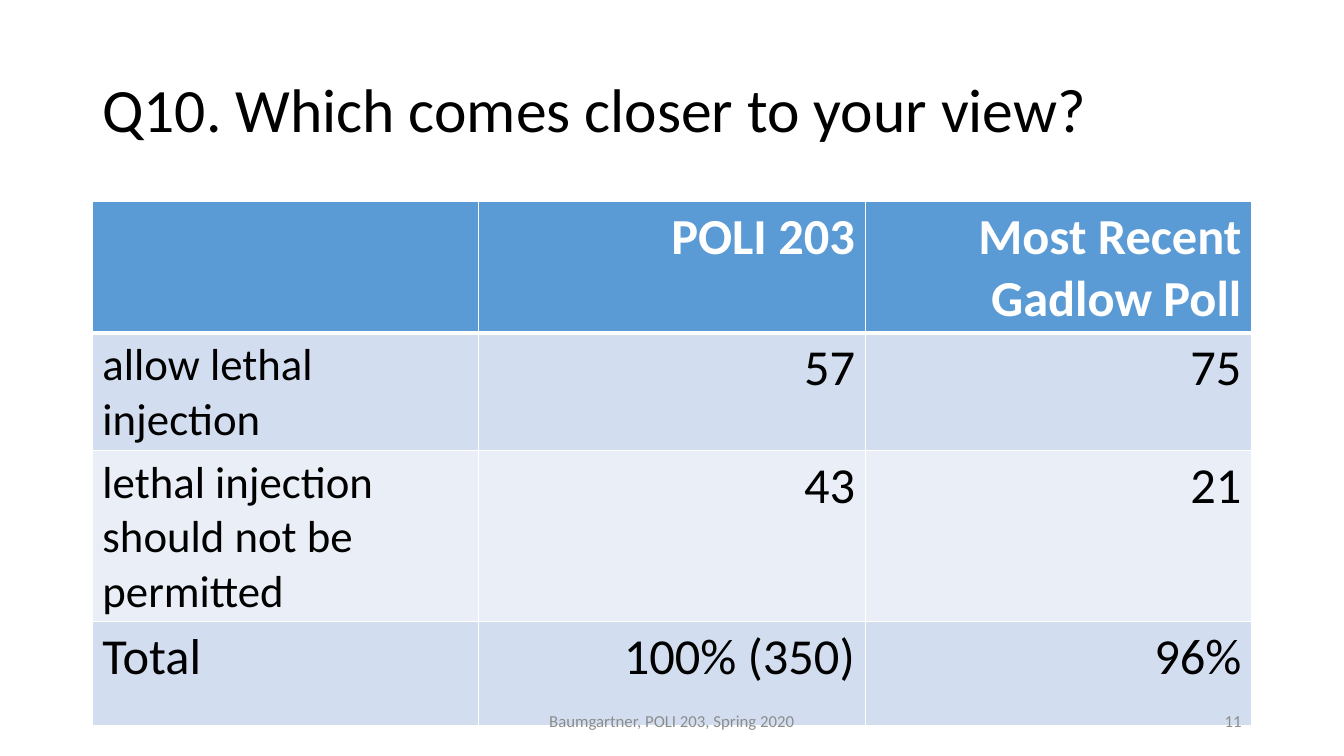
"""Build the Q10 poll comparison slide."""
from dataclasses import dataclass

from lxml import etree
from pptx import Presentation
from pptx.dml.color import RGBColor
from pptx.enum.text import MSO_ANCHOR, PP_ALIGN
from pptx.oxml.ns import qn
from pptx.slide import Slide
from pptx.table import _Cell
from pptx.text.text import _Paragraph
from pptx.util import Emu, Pt

EMU_PER_PX = 9525
FONT = "Calibri"
LEFT, CENTER, RIGHT = PP_ALIGN.LEFT, PP_ALIGN.CENTER, PP_ALIGN.RIGHT
MIDDLE = MSO_ANCHOR.MIDDLE
COLORS = {
    "black": "000000",
    "white": "FFFFFF",
    "footer": "8C8C8C",
    "header": "5B9BD5",
    "odd_row": "D2DEEF",
    "even_row": "EAEFF7",
}
TABLE_LEFT, TABLE_TOP = 88, 192
COLUMN_WIDTH, ROW_HEIGHT = 368, 99


@dataclass(frozen=True)
class Label:
    text: str
    left: int
    top: int
    width: int
    height: int
    size: int
    color: str
    align: PP_ALIGN
    line_spacing: float = 1.0


@dataclass(frozen=True)
class PollRow:
    answer: str
    course: str
    national: str
    fill: str
    answer_size: int = 36
    is_header: bool = False


LABELS = [
    Label("Q10. Which comes closer to your view?", 88, 38, 1104, 139, 44, "black", LEFT, 0.9),
    Label("Baumgartner, POLI 203, Spring 2020", 424, 667, 432, 38, 12, "footer", CENTER),
    Label("11", 904, 667, 288, 38, 12, "footer", RIGHT),
]
POLL_ROWS = [
    PollRow("", "POLI 203", "Most Recent Gadlow Poll", "header", is_header=True),
    PollRow("allow lethal injection", "57", "75", "odd_row", 32),
    PollRow("lethal injection should not be permitted", "43", "21", "even_row", 32),
    PollRow("Total", "100% (350)", "96%", "odd_row"),
]


def px(length: int) -> Emu:
    return Emu(length * EMU_PER_PX)


def style(paragraph: _Paragraph, size: int, color: str, align: PP_ALIGN, bold: bool = False) -> None:
    paragraph.alignment = align
    for font in [paragraph.font, *(run.font for run in paragraph.runs)]:
        font.name = FONT
        font.size = Pt(size)
        font.bold = bold
        font.color.rgb = RGBColor.from_string(COLORS[color])


def add_label(slide: Slide, label: Label) -> None:
    box = slide.shapes.add_textbox(px(label.left), px(label.top), px(label.width), px(label.height))
    frame = box.text_frame
    frame.word_wrap = True
    frame.vertical_anchor = MIDDLE
    frame.text = label.text
    paragraph = frame.paragraphs[0]
    paragraph.line_spacing = label.line_spacing
    style(paragraph, label.size, label.color, label.align)


def add_borders(cell: _Cell, top: int, bottom: int) -> None:
    properties = cell._tc.get_or_add_tcPr()
    for side, points in (("L", 1), ("R", 1), ("T", top), ("B", bottom)):
        line = etree.SubElement(properties, qn(f"a:ln{side}"), w=str(Pt(points)))
        fill = etree.SubElement(line, qn("a:solidFill"))
        etree.SubElement(fill, qn("a:srgbClr"), val=COLORS["white"])


def add_poll_table(slide: Slide, rows: list[PollRow]) -> None:
    table = slide.shapes.add_table(
        len(rows), 3, px(TABLE_LEFT), px(TABLE_TOP), px(3 * COLUMN_WIDTH), px(len(rows) * ROW_HEIGHT)
    ).table
    for index, row in enumerate(rows):
        color = "white" if row.is_header else "black"
        top = 3 if index == 1 else 1
        bottom = 3 if row.is_header else 1
        for column, text in enumerate((row.answer, row.course, row.national)):
            cell = table.cell(index, column)
            add_borders(cell, top, bottom)
            cell.fill.solid()
            cell.fill.fore_color.rgb = RGBColor.from_string(COLORS[row.fill])
            cell.text_frame.text = text
            size, align = (36, RIGHT) if column else (row.answer_size, LEFT)
            style(cell.text_frame.paragraphs[0], size, color, align, row.is_header)


def main() -> None:
    deck = Presentation()
    deck.slide_width, deck.slide_height = px(1280), px(720)
    slide = deck.slides.add_slide(deck.slide_layouts[6])
    title, *footers = LABELS
    add_label(slide, title)
    add_poll_table(slide, POLL_ROWS)
    for footer in footers:
        add_label(slide, footer)
    deck.save("out.pptx")


if __name__ == "__main__":
    main()
